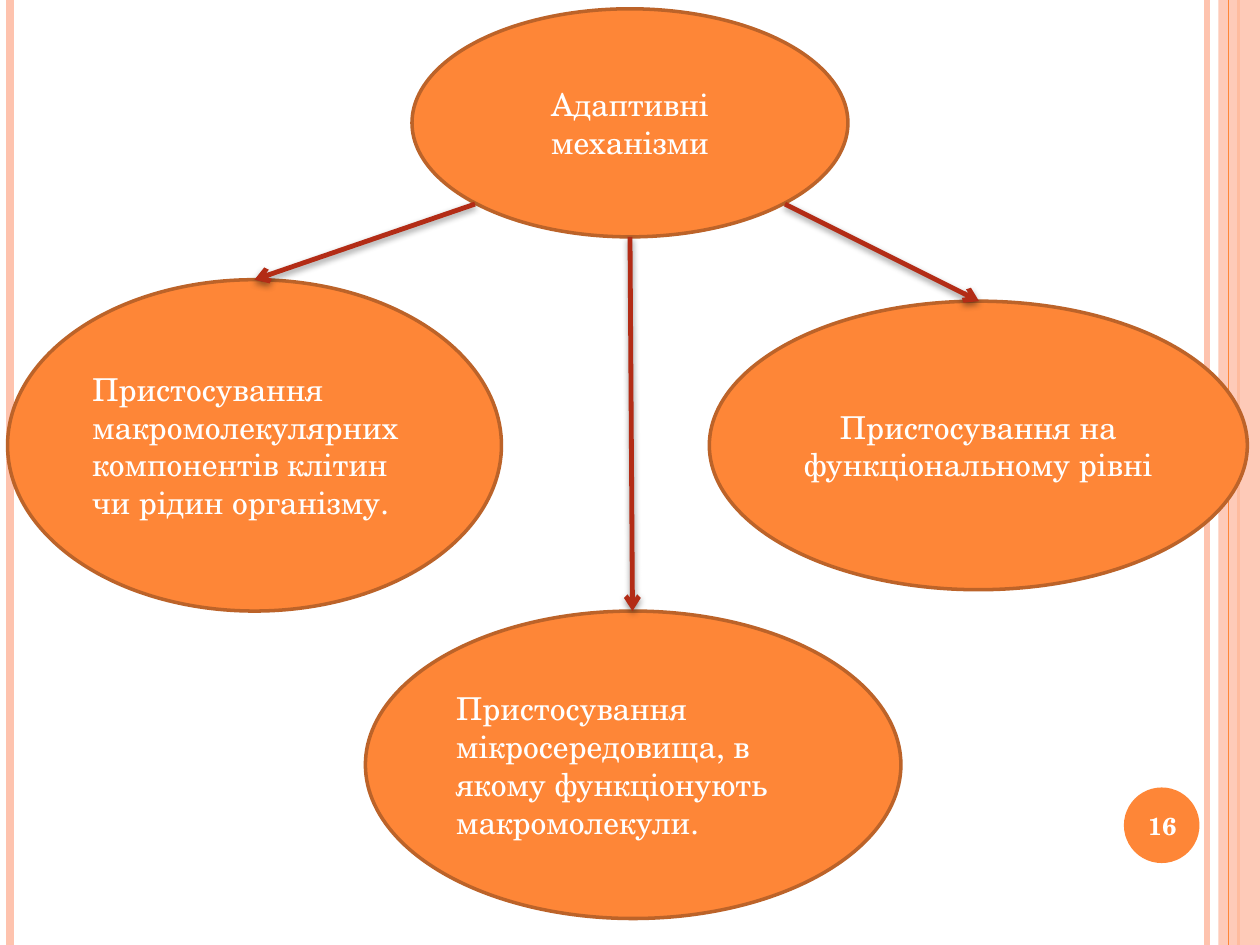
from dataclasses import dataclass

from lxml import etree
from pptx import Presentation
from pptx.dml.color import RGBColor
from pptx.enum.shapes import MSO_CONNECTOR, MSO_SHAPE
from pptx.enum.text import MSO_ANCHOR, PP_ALIGN
from pptx.oxml.ns import qn
from pptx.util import Inches, Pt

OVAL, RECT = MSO_SHAPE.OVAL, MSO_SHAPE.RECTANGLE
STRAIGHT = MSO_CONNECTOR.STRAIGHT
LEFT, CENTER = PP_ALIGN.LEFT, PP_ALIGN.CENTER
MIDDLE = MSO_ANCHOR.MIDDLE


@dataclass
class Theme:
    orange: str = "FE8637"
    edge: str = "BC6329"
    pink: str = "FEC3AE"
    red: str = "B32C16"
    white: str = "FFFFFF"
    font: str = "TeX Gyre Schola"
    body: int = 18
    number: int = 14


theme = Theme()
prs = Presentation()
prs.slide_width, prs.slide_height = Inches(10), Inches(7.5)
slide = prs.slides.add_slide(prs.slide_layouts[6])
shapes = slide.shapes


def add_line(start, end, color, width):
    """Draw a straight line; return it with its empty effect list."""
    line = shapes.add_connector(STRAIGHT, *map(Inches, start + end))
    line.line.color.rgb = RGBColor.from_string(color)
    line.line.width = Pt(width)
    effects = etree.SubElement(line._element.spPr, qn("a:effectLst"))
    return line, effects


def set_text(shape, text, size, align, bold=False):
    frame = shape.text_frame
    frame.word_wrap = True
    frame.vertical_anchor = MIDDLE
    frame.text = text
    par = frame.paragraphs[0]
    par.alignment = align
    par.font.name = theme.font
    par.font.size = Pt(size)
    par.font.bold = bold
    par.font.color.rgb = RGBColor.from_string(theme.white)


# Side stripes, with the pale band under the last one
for x, color, width in [
    (9.58, theme.pink, 3),
    (0.08, theme.pink, 4.5),
    (9.83, theme.orange, 1.5),
]:
    add_line((x, 0), (x, 7.5), color, width)

band = shapes.add_shape(RECT, Inches(9.67), 0, Inches(0.33), Inches(7.5))
band.shadow.inherit = False
band.fill.solid()
band.fill.fore_color.rgb = RGBColor.from_string(theme.pink)
band.line.fill.background()
tint = band._element.spPr.find(qn("a:solidFill"))[0]
etree.SubElement(tint, qn("a:alpha"), val="87000")

add_line((9.75, 0), (9.75, 7.5), theme.orange, 0.75)

# Slide number badge
badge = shapes.add_shape(OVAL, *map(Inches, (8.92, 6.25, 0.6, 0.6)))
badge.shadow.inherit = False
badge.fill.solid()
badge.fill.fore_color.rgb = RGBColor.from_string(theme.orange)
badge.line.fill.background()
label = shapes.add_textbox(*map(Inches, (8.89, 6.27, 0.67, 0.57)))
set_text(label, "16", theme.number, CENTER, bold=True)

# Ovals: the main idea and its three branches
for box, text, align in [
    ((3.27, 0.07, 3.46, 1.81), "Адаптивні механізми", CENTER),
    ((0.06, 2.22, 3.92, 2.63),
     "Пристосування макромолекулярних компонентів клітин чи рідин організму.",
     LEFT),
    ((2.9, 4.85, 4.25, 2.44),
     "Пристосування мікросередовища, в якому функціонують макромолекули.",
     LEFT),
    ((5.63, 2.39, 4.27, 2.29), "Пристосування на функціональному рівні", CENTER),
]:
    oval = shapes.add_shape(OVAL, *map(Inches, box))
    oval.shadow.inherit = False
    oval.fill.solid()
    oval.fill.fore_color.rgb = RGBColor.from_string(theme.orange)
    oval.line.color.rgb = RGBColor.from_string(theme.edge)
    oval.line.width = Pt(2)
    set_text(oval, text, theme.body, align)

# Arrows from the main idea, each with a soft shadow
for start, end in [
    ((3.77, 1.62), (2.02, 2.22)),
    ((5, 1.88), (5.02, 4.85)),
    ((6.23, 1.62), (7.77, 2.39)),
]:
    arrow, effects = add_line(start, end, theme.red, 2.75)
    stroke = arrow._element.spPr.find(qn("a:ln"))
    etree.SubElement(stroke, qn("a:tailEnd"), type="arrow")
    shadow = etree.SubElement(
        effects, qn("a:outerShdw"), blurRad=str(Pt(4)), dist=str(Pt(1.6)),
        dir="5400000", rotWithShape="0")
    shade = etree.SubElement(shadow, qn("a:srgbClr"), val="000000")
    etree.SubElement(shade, qn("a:alpha"), val="42000")

prs.save("out.pptx")
